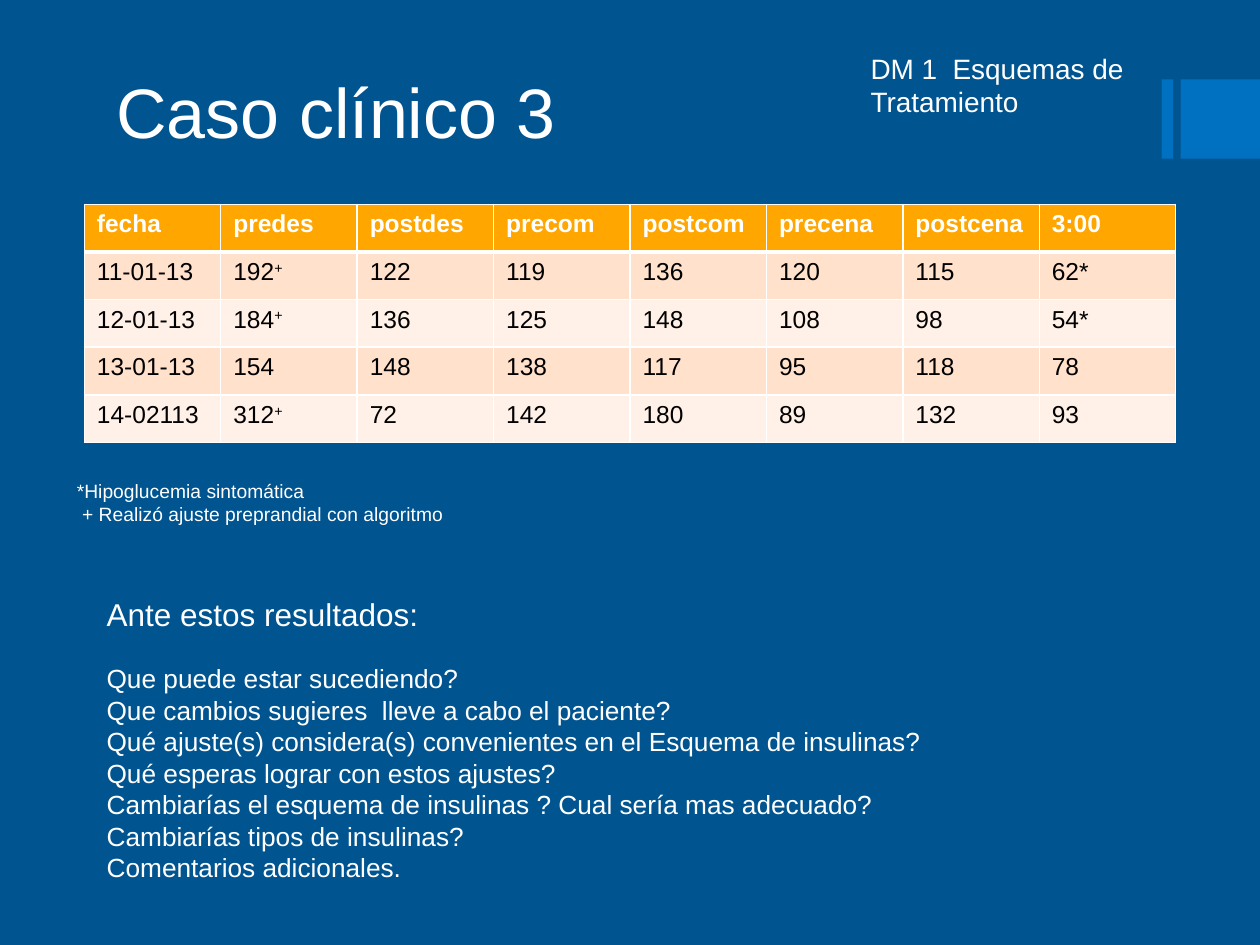
import dataclasses

import lxml.etree
import pptx
import pptx.dml.color
import pptx.enum.shapes
import pptx.enum.text
import pptx.oxml.ns
import pptx.util

Cm = pptx.util.Cm
Pt = pptx.util.Pt
qn = pptx.oxml.ns.qn


@dataclasses.dataclass(frozen=True)
class Theme:
    font: str = "Arial"
    background: str = "005490"
    accent: str = "0070C0"
    header: str = "FFA600"
    bands: tuple = ("FFE1CC", "FFF1E7")
    light: str = "FFFFFF"
    dark: str = "000000"
    title: int = 40
    heading: int = 18
    topic: int = 16
    body: int = 15
    cell: int = 14
    note: int = 11


theme = Theme()


def style_paragraph(paragraph, size, color, bold=False):
    for run in paragraph.runs:
        run.font.name = theme.font
        run.font.size = Pt(size)
        run.font.bold = bold
        run.font.color.rgb = pptx.dml.color.RGBColor.from_string(color)


def add_text(left, top, width, height, lines, size):
    shape = slide.shapes.add_textbox(Cm(left), Cm(top), Cm(width), Cm(height))
    text_frame = shape.text_frame
    text_frame.word_wrap = True
    text_frame.text = "\n".join(lines)
    for paragraph in text_frame.paragraphs:
        style_paragraph(paragraph, size, theme.light)
    return text_frame


presentation = pptx.Presentation()
presentation.slide_width = Cm(25.4)
presentation.slide_height = Cm(19.05)
slide = presentation.slides.add_slide(presentation.slide_layouts[6])
background = slide.background.fill
background.solid()
background.fore_color.rgb = pptx.dml.color.RGBColor.from_string(theme.background)

for left, width in ((23.42, 0.23), (23.8, 1.6)):
    shape = slide.shapes.add_shape(
        pptx.enum.shapes.MSO_SHAPE.RECTANGLE, Cm(left), Cm(1.6), Cm(width), Cm(1.6))
    shape.shadow.inherit = False
    shape.fill.solid()
    shape.fill.fore_color.rgb = pptx.dml.color.RGBColor.from_string(theme.accent)
    shape.line.fill.background()

title = add_text(2.1, 0, 20.3, 3.2, ["Caso clínico 3"], theme.title)
title.vertical_anchor = pptx.enum.text.MSO_ANCHOR.BOTTOM

readings = [
    ["fecha", "predes", "postdes", "precom", "postcom", "precena", "postcena", "3:00"],
    ["11-01-13", "192+", "122", "119", "136", "120", "115", "62*"],
    ["12-01-13", "184+", "136", "125", "148", "108", "98", "54*"],
    ["13-01-13", "154", "148", "138", "117", "95", "118", "78"],
    ["14-02113", "312+", "72", "142", "180", "89", "132", "93"],
]
table = slide.shapes.add_table(
    len(readings), len(readings[0]), Cm(1.7), Cm(4.12), Cm(22), Cm(4.8)).table
for column in table.columns:
    column.width = Cm(2.75)
for row in table.rows:
    row.height = Cm(0.96)

for row_index, values in enumerate(readings):
    is_header = row_index == 0
    fill_color = theme.header if is_header else theme.bands[(row_index - 1) % 2]
    borders = {"L": 1, "R": 1, "T": 3 if row_index == 1 else 1, "B": 3 if is_header else 1}
    for column_index, value in enumerate(values):
        cell = table.cell(row_index, column_index)
        properties = cell._tc.get_or_add_tcPr()
        for side, points in borders.items():
            line = lxml.etree.SubElement(properties, qn(f"a:ln{side}"), w=str(Pt(points)))
            line_fill = lxml.etree.SubElement(line, qn("a:solidFill"))
            lxml.etree.SubElement(line_fill, qn("a:srgbClr"), val=theme.light)
        cell.fill.solid()
        cell.fill.fore_color.rgb = pptx.dml.color.RGBColor.from_string(fill_color)

        paragraph = cell.text_frame.paragraphs[0]
        paragraph.text = value.removesuffix("+")
        if value.endswith("+"):
            mark = paragraph.add_run()
            mark.text = "+"
            mark._r.get_or_add_rPr().set("baseline", "30000")
        text_color = theme.light if is_header else theme.dark
        style_paragraph(paragraph, theme.cell, text_color, bold=is_header)

add_text(17.3, 0.91, 6.25, 0.84, ["DM 1  Esquemas de Tratamiento"], theme.topic)

questions = add_text(1.9, 11.87, 20.93, 6.2, [
    "Ante estos resultados:",
    "Que puede estar sucediendo?",
    "Que cambios sugieres  lleve a cabo el paciente?",
    "Qué ajuste(s) considera(s) convenientes en el Esquema de insulinas?",
    "Qué esperas lograr con estos ajustes?",
    "Cambiarías el esquema de insulinas ? Cual sería mas adecuado?",
    "Cambiarías tipos de insulinas?",
    "Comentarios adicionales.",
], theme.body)
heading = questions.paragraphs[0]
style_paragraph(heading, theme.heading, theme.light)
heading.space_after = Pt(17)

add_text(1.3, 9.53, 16.8, 1.68, [
    "*Hipoglucemia sintomática",
    " + Realizó ajuste preprandial con algoritmo",
], theme.note)

presentation.save("out.pptx")
